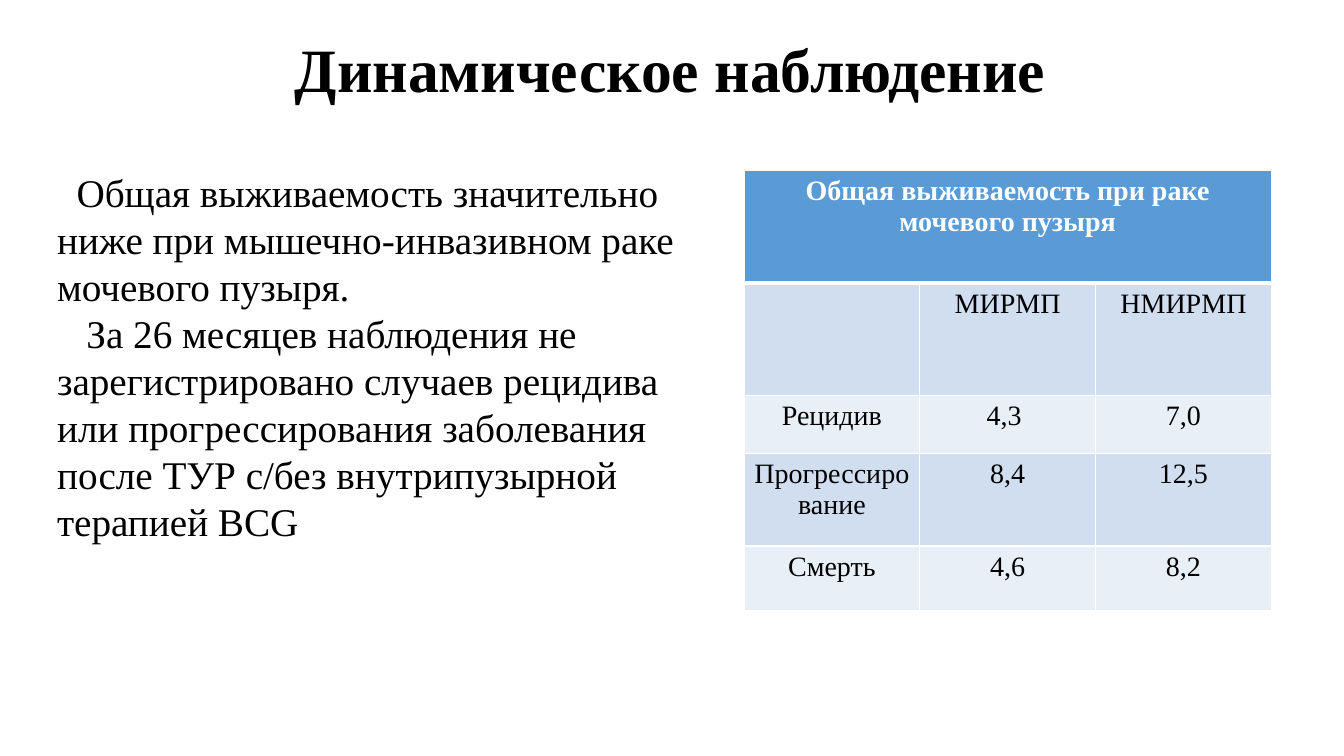
from lxml import etree
from pptx import Presentation
from pptx.dml.color import RGBColor
from pptx.enum.text import MSO_ANCHOR, PP_ALIGN
from pptx.oxml.ns import qn
from pptx.util import Cm, Pt

BLACK = RGBColor(0x00, 0x00, 0x00)
WHITE = RGBColor(0xFF, 0xFF, 0xFF)
HEADER_BLUE = RGBColor(0x5B, 0x9B, 0xD5)
BAND_DARK = RGBColor(0xD1, 0xDE, 0xEF)
BAND_LIGHT = RGBColor(0xE9, 0xEF, 0xF7)
LEFT, CENTER = PP_ALIGN.LEFT, PP_ALIGN.CENTER
MIDDLE = MSO_ANCHOR.MIDDLE
FONT = "Times New Roman"


def write(para, text, size, color=BLACK, bold=False, align=LEFT, indent=0, spacing=1.0):
    para.alignment = align
    para.line_spacing = spacing
    if indent:
        para._p.get_or_add_pPr().set("indent", str(Cm(indent)))
    span = para.add_run()
    span.text = text
    span.font.name = FONT
    span.font.size = Pt(size)
    span.font.bold = bold
    span.font.color.rgb = color


def add_border(cell, side, width):
    line = etree.SubElement(cell._tc.get_or_add_tcPr(), qn(f"a:ln{side}"), w=str(Pt(width)))
    fill = etree.SubElement(line, qn("a:solidFill"))
    etree.SubElement(fill, qn("a:srgbClr"), val=str(WHITE))


deck = Presentation()
deck.slide_width, deck.slide_height = Cm(33.87), Cm(19.05)
page = deck.slides.add_slide(deck.slide_layouts[6])

title = page.shapes.add_textbox(Cm(2.29), Cm(0), Cm(29.21), Cm(3.68)).text_frame
title.word_wrap = True
title.vertical_anchor = MIDDLE
write(title.paragraphs[0], "Динамическое наблюдение", 44, bold=True, align=CENTER, spacing=0.9)

body = page.shapes.add_textbox(Cm(1.19), Cm(4.11), Cm(16.99), Cm(12.09)).text_frame
body.word_wrap = True
write(
    body.paragraphs[0],
    "Общая выживаемость значительно ниже при мышечно-инвазивном раке мочевого пузыря.",
    28,
    indent=0.49,
)
write(
    body.add_paragraph(),
    "За 26 месяцев наблюдения не зарегистрировано случаев рецидива или прогрессирования "
    "заболевания после ТУР с/без внутрипузырной терапией BCG",
    28,
    indent=0.74,
)

survival_rows = [
    ("Общая выживаемость при раке мочевого пузыря", "", ""),
    ("", "МИРМП", "НМИРМП"),
    ("Рецидив", "4,3 ", "7,0"),
    ("Прогрессирование", "8,4", "12,5"),
    ("Смерть", "4,6", "8,2"),
]
row_heights = [2.84, 2.84, 1.45, 2.34, 1.63]
frame = page.shapes.add_table(5, 3, Cm(18.75), Cm(4.29), Cm(13.29), Cm(sum(row_heights)))
table = frame.table
for column in table.columns:
    column.width = Cm(4.43)

for row, (height, values) in enumerate(zip(row_heights, survival_rows)):
    table.rows[row].height = Cm(height)
    header = row == 0
    band = HEADER_BLUE if header else BAND_DARK if row % 2 else BAND_LIGHT
    for col, value in enumerate(values):
        cell = table.cell(row, col)
        widths = {"L": 0.96, "R": 0.96, "T": 3 if row == 1 else 0.96, "B": 3 if header else 0.96}
        for side, width in widths.items():
            add_border(cell, side, width)
        cell.fill.solid()
        cell.fill.fore_color.rgb = band
        if value:
            color = WHITE if header else BLACK
            write(cell.text_frame.paragraphs[0], value, 20, color, bold=header, align=CENTER)
table.cell(0, 0).merge(table.cell(0, 2))

deck.save("out.pptx")
